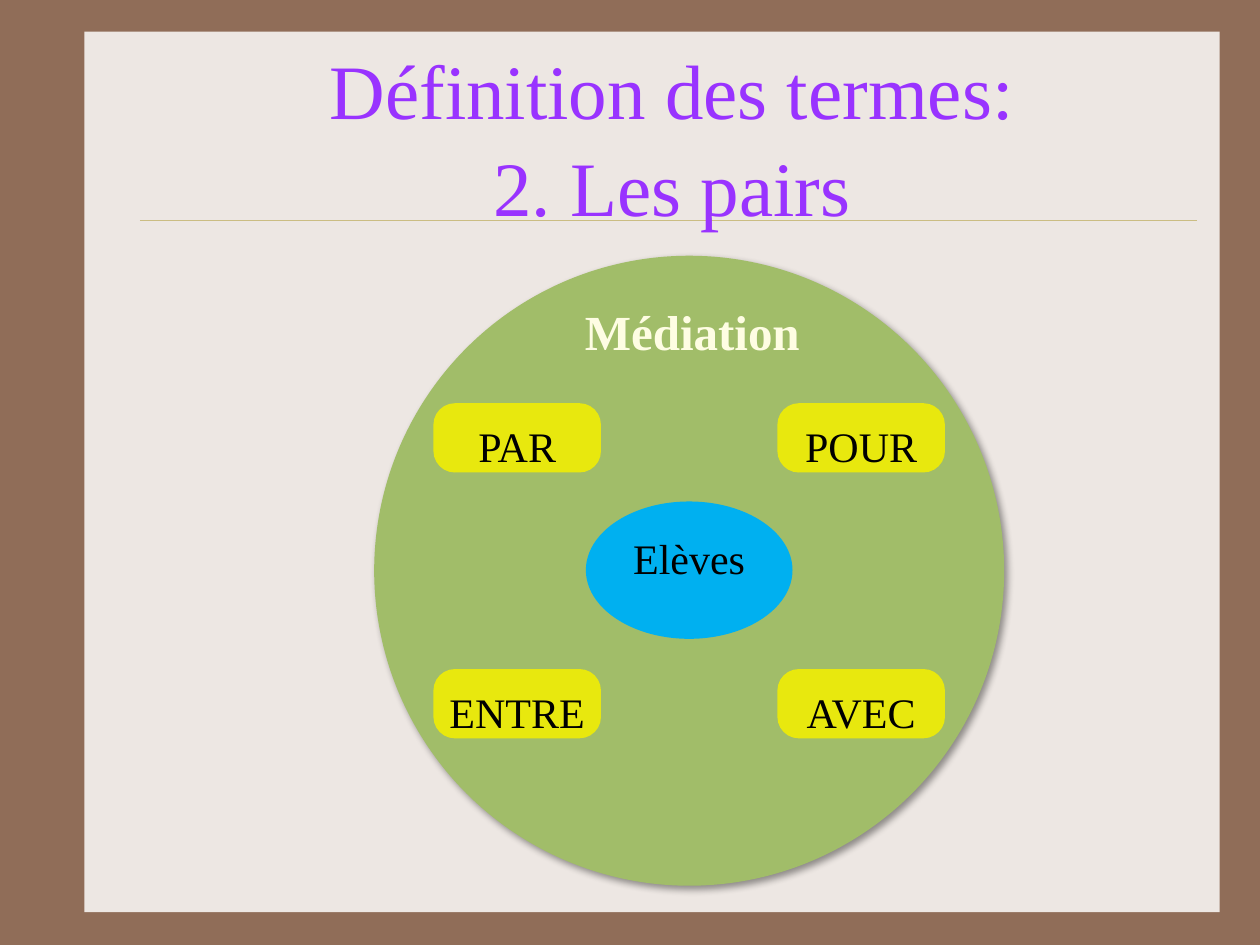
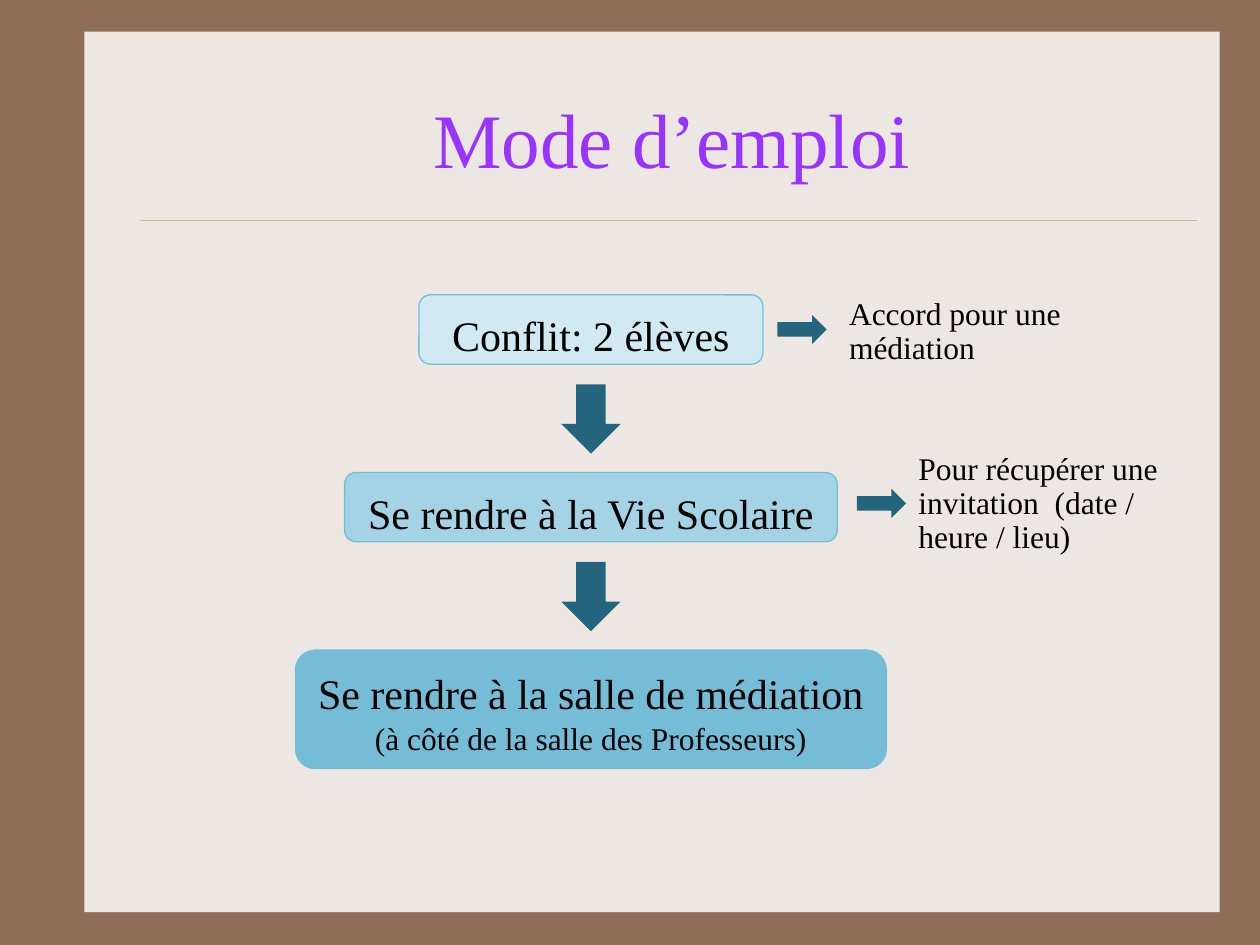
from lxml import etree
from pptx import Presentation
from pptx import util as u
from pptx.dml.color import RGBColor
from pptx.enum import shapes, text
from pptx.oxml import ns

# Shared look
FONT = "Times New Roman"
BROWN = RGBColor(0x90, 0x6D, 0x58)
PAPER = RGBColor(0xED, 0xE7, 0xE3)
RULE = RGBColor(0xCB, 0xBD, 0x83)
PURPLE = RGBColor(0x99, 0x33, 0xFF)
BLACK = RGBColor(0, 0, 0)
GREEN = RGBColor(0xA1, 0xBD, 0x69)
CREAM = RGBColor(0xFE, 0xFD, 0xE3)
BLUE = RGBColor(0x00, 0xB0, 0xF0)
YELLOW = RGBColor(0xE8, 0xE8, 0x0E)
TEAL = RGBColor(0x24, 0x64, 0x7C)
STEP_FILLS = [RGBColor(0xD1, 0xE9, 0xF2), RGBColor(0xA3, 0xD3, 0xE4),
              RGBColor(0x75, 0xBD, 0xD7)]
STEP_LINE = STEP_FILLS[-1]

SHAPE = shapes.MSO_SHAPE
ALIGN = text.PP_ALIGN
ANCHOR = text.MSO_ANCHOR


def inches(*lengths):
    return [u.Inches(length) for length in lengths]


def add_effects(sp):
    return etree.SubElement(sp._element.spPr, ns.qn("a:effectLst"))


def style_runs(p, size, color=BLACK, bold=False):
    for r in p.runs:
        r.font.name = FONT
        r.font.size = u.Pt(size)
        r.font.bold = bold
        r.font.color.rgb = color


def add_shape(s, kind, box, fill, line=None):
    sp = s.shapes.add_shape(kind, *inches(*box))
    sp.shadow.inherit = False
    sp.fill.solid()
    sp.fill.fore_color.rgb = fill
    if line is None:
        sp.line.fill.background()
    else:
        sp.line.color.rgb = line
        sp.line.width = u.Pt(0.75)
    return sp


def add_label(s, kind, box, fill, lines, line=None, corner=None):
    """Shape with centred lines, each a pair of wording and size."""
    sp = add_shape(s, kind, box, fill, line)
    if corner is not None:
        sp.adjustments[0] = corner
    tf = sp.text_frame
    tf.word_wrap = False
    tf.vertical_anchor = ANCHOR.TOP
    tf.margin_top = u.Inches(0.09)
    tf.text = "\n".join(wording for wording, _ in lines)
    for p, (_, size) in zip(tf.paragraphs, lines):
        p.alignment = ALIGN.CENTER
        style_runs(p, size)
    for p in tf.paragraphs[1:]:
        p.space_before = u.Pt(1)


def add_text(s, box, wording, size, color=BLACK, bold=False, wrap=True,
             align=ALIGN.LEFT, anchor=ANCHOR.TOP, spacing=1.0, top=0.05):
    tf = s.shapes.add_textbox(*inches(*box)).text_frame
    tf.word_wrap = wrap
    tf.vertical_anchor = anchor
    tf.margin_top = u.Inches(top)
    tf.text = wording
    p = tf.paragraphs[0]
    p.alignment = align
    p.line_spacing = spacing
    style_runs(p, size, color, bold)


def add_framed_slide(prs, title):
    """Slide with the brown border, paper panel, title and rule."""
    s = prs.slides.add_slide(prs.slide_layouts[6])
    s.background.fill.solid()
    s.background.fill.fore_color.rgb = BROWN
    add_shape(s, SHAPE.RECTANGLE, (0.67, 0.25, 9.01, 6.99), PAPER)
    rule = s.shapes.add_connector(shapes.MSO_CONNECTOR.STRAIGHT,
                                  *inches(1.11, 1.75, 9.5, 1.75))
    rule.line.color.rgb = RULE
    rule.line.width = u.Pt(0.25)
    add_effects(rule)
    add_text(s, (1.17, 0.42, 8.33, 1.25), title, 44, PURPLE,
             align=ALIGN.CENTER, anchor=ANCHOR.MIDDLE, spacing=1.05, top=0.1)
    return s


def add_circle_shadow(sp):
    effects = sp._element.spPr.find(ns.qn("a:effectLst"))
    shadow = etree.SubElement(effects, ns.qn("a:outerShdw"),
                              blurRad=str(u.Pt(4)), dist=str(u.Pt(3)),
                              dir=str(45 * 60000), rotWithShape="0")
    color = etree.SubElement(shadow, ns.qn("a:srgbClr"), val="000000")
    etree.SubElement(color, ns.qn("a:alpha"), val="40000")


def build_peers(prs):
    s = add_framed_slide(prs, "Définition des termes:\v2. Les pairs")
    # Mediation circle around the pupils
    circle = add_shape(s, SHAPE.OVAL, (2.97, 2.03, 5, 5), GREEN)
    add_circle_shadow(circle)
    add_text(s, (4.53, 2.34, 1.93, 0.53), "Médiation", 28, CREAM, bold=True,
             wrap=False, align=ALIGN.CENTER)
    add_label(s, SHAPE.OVAL, (4.65, 3.98, 1.64, 1.09), BLUE, [("Elèves", 24)])
    # Two by two grid of prepositions
    for i, word in enumerate(["PAR", "POUR", "ENTRE", "AVEC"]):
        row, col = divmod(i, 2)
        box = (3.44 + 2.73 * col, 3.2 + 2.11 * row, 1.33, 0.55)
        add_label(s, SHAPE.ROUNDED_RECTANGLE, box, YELLOW, [(word, 24)],
                  corner=0.31)


def build_instructions(prs):
    s = add_framed_slide(prs, "Mode d’emploi")
    center, first_top, pitch = 4.69, 2.34, 1.41
    steps = [
        (2.73, 0.55, [("Conflit: 2 élèves", 24)]),
        (3.91, 0.55, [("Se rendre à la Vie Scolaire", 24)]),
        (4.69, 0.94, [("Se rendre à la salle de médiation", 24),
                      ("(à côté de la salle des Professeurs)", 18)]),
    ]
    # Steps, with a down arrow before each one but the first
    for i, (width, height, lines) in enumerate(steps):
        top = first_top + pitch * i
        add_label(s, SHAPE.ROUNDED_RECTANGLE,
                  (center - width / 2, top, width, height),
                  STEP_FILLS[i], lines, line=STEP_LINE)
        if i:
            add_shape(s, SHAPE.DOWN_ARROW,
                      (center - 0.235, top - 0.7, 0.47, 0.55), TEAL)

    # Side remarks, each with its arrow
    remarks = [
        ((6.17, 2.5), (6.64, 2.3, 1.88, 0.65), "Accord pour une médiation"),
        ((6.8, 3.88), (7.19, 3.53, 2.19, 0.92),
         "Pour récupérer une invitation  (date / heure / lieu)"),
    ]
    for arrow_at, box, wording in remarks:
        add_shape(s, SHAPE.RIGHT_ARROW, (*arrow_at, 0.39, 0.23), TEAL)
        add_text(s, box, wording, 18, spacing=0.9, top=0.07)


def main():
    prs = Presentation()
    prs.slide_width, prs.slide_height = inches(10, 7.5)
    build_peers(prs)
    build_instructions(prs)
    prs.save("out.pptx")


if __name__ == "__main__":
    main()
